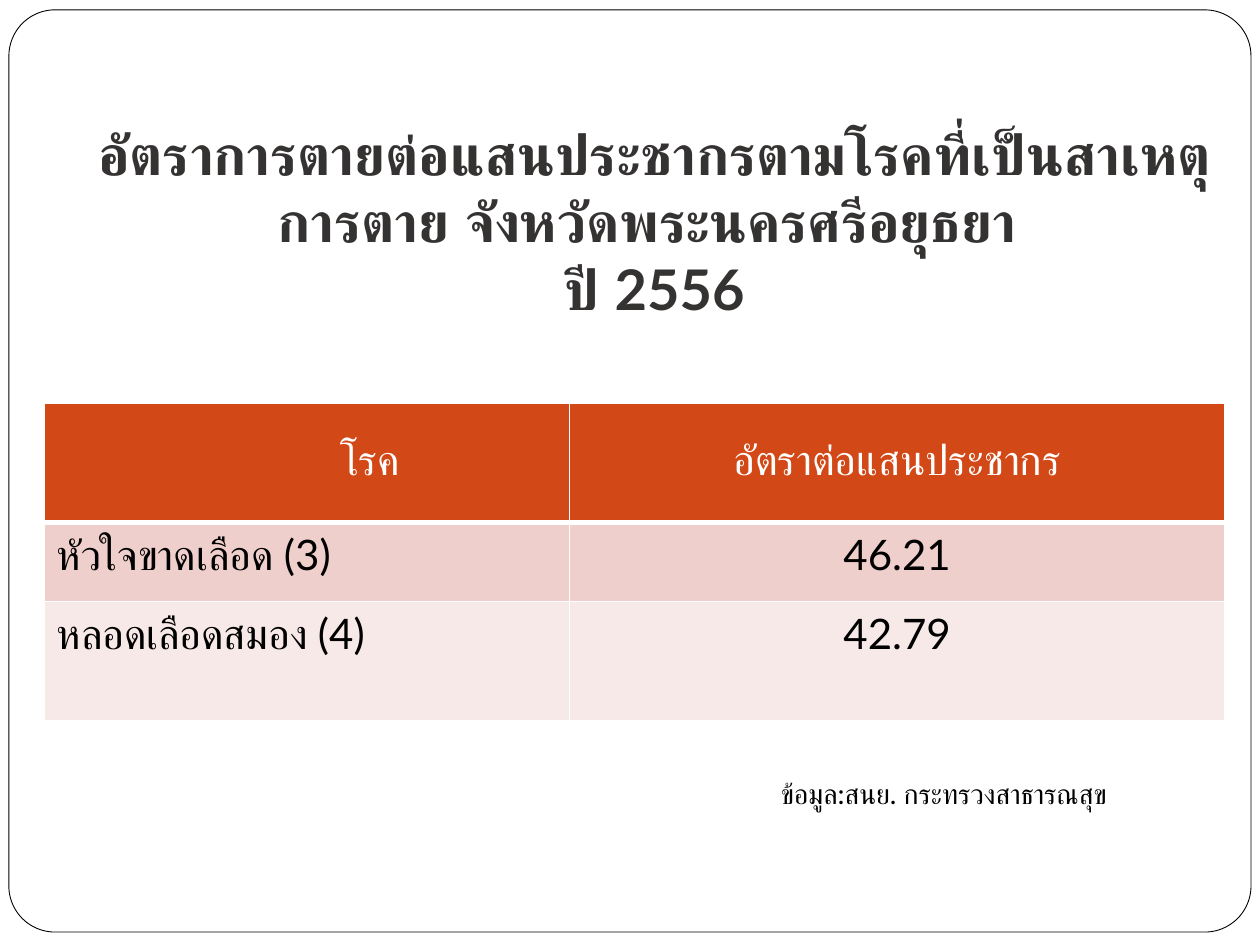
"""Build a slide with a table of death rates by disease."""
from lxml import etree
from pptx import Presentation
from pptx.dml.color import RGBColor
from pptx.enum.shapes import MSO_SHAPE
from pptx.enum.text import MSO_ANCHOR, MSO_AUTO_SIZE, PP_ALIGN
from pptx.oxml.ns import qn
from pptx.util import Cm, Pt

ROUNDED = MSO_SHAPE.ROUNDED_RECTANGLE
LEFT, CENTER = PP_ALIGN.LEFT, PP_ALIGN.CENTER
TOP, MIDDLE, BOTTOM = MSO_ANCHOR.TOP, MSO_ANCHOR.MIDDLE, MSO_ANCHOR.BOTTOM
NO_FIT = MSO_AUTO_SIZE.NONE

TITLE = "อัตราการตายต่อแสนประชากรตามโรคที่เป็นสาเหตุการตาย จังหวัดพระนครศรีอยุธยา \vปี 2556"
SOURCE = "ข้อมูล:สนย. กระทรวงสาธารณสุข"
RATES = [
    ("โรค", "อัตราต่อแสนประชากร"),
    ("หัวใจขาดเลือด (3)", "46.21"),
    ("หลอดเลือดสมอง (4)", "42.79"),
]

COLORS = {
    "white": "FFFFFF", "black": "000000", "title": "353232",
    "header": "D34817", "band_dark": "EFCFCC", "band_light": "F7E9E8",
}
ROW_FILLS = ["header", "band_dark", "band_light"]
ROW_HEIGHTS = [2.4, 1.6, 2.4]
COLUMN_WIDTHS = [10.59, 13.21]
FRAME_BOX = (0.18, 0.2, 25.04, 18.59)
TITLE_BOX = (1.5, 1.32, 23.39, 5.41)
SOURCE_BOX = (15.49, 15.52, 8.81, 0.94)
TABLE_BOX = (0.89, 8.13, sum(COLUMN_WIDTHS), sum(ROW_HEIGHTS))

FONTS = {
    "title": {"name": "Lato", "size": Pt(32), "bold": True},
    "cell": {"name": "Lato", "size": Pt(24), "bold": False},
    "source": {"name": "Lato", "size": Pt(16), "bold": False},
}
TITLE_FRAME = {
    "word_wrap": True, "auto_size": NO_FIT, "vertical_anchor": BOTTOM,
    "margin_left": Cm(0.25), "margin_right": Cm(0.25),
    "margin_top": Cm(0.13), "margin_bottom": Cm(0.25),
}


def apply(target, values):
    for key, value in values.items():
        setattr(target, key, value)


def lengths(box):
    return [Cm(value) for value in box]


def rgb(color):
    return RGBColor.from_string(COLORS[color])


def write(frame, text, style, color, align=LEFT):
    frame.text = text
    paragraph = frame.paragraphs[0]
    paragraph.alignment = align
    for run in paragraph.runs:
        apply(run.font, FONTS[style])
        run.font.color.rgb = rgb(color)


def add_borders(cell, bottom_width):
    properties = cell._tc.get_or_add_tcPr()
    for side, width in {"L": 1, "R": 1, "T": 1, "B": bottom_width}.items():
        border = etree.SubElement(properties, qn(f"a:ln{side}"), w=str(Pt(width)))
        fill = etree.SubElement(border, qn("a:solidFill"))
        etree.SubElement(fill, qn("a:srgbClr"), val=COLORS["white"])


def add_frame(slide):
    frame = slide.shapes.add_shape(ROUNDED, *lengths(FRAME_BOX))
    frame.adjustments[0] = 0.05
    frame.shadow.inherit = False
    frame.fill.solid()
    frame.fill.fore_color.rgb = rgb("white")
    frame.line.color.rgb = rgb("black")
    frame.line.width = Pt(0.5)
    slide.shapes._spTree.insert(2, frame._element)


def add_title(slide):
    title = slide.shapes.title
    apply(title, dict(zip(("left", "top", "width", "height"), lengths(TITLE_BOX))))
    apply(title.text_frame, TITLE_FRAME)
    write(title.text_frame, TITLE, "title", "title", CENTER)


def add_rates(slide):
    table = slide.shapes.add_table(len(RATES), len(COLUMN_WIDTHS), *lengths(TABLE_BOX)).table
    for column, width in zip(table.columns, COLUMN_WIDTHS):
        column.width = Cm(width)
    for row_index, (entries, height, fill) in enumerate(zip(RATES, ROW_HEIGHTS, ROW_FILLS)):
        table.rows[row_index].height = Cm(height)
        is_header = row_index == 0
        for column_index, entry in enumerate(entries):
            cell = table.cell(row_index, column_index)
            add_borders(cell, 3 if is_header else 1)
            cell.fill.solid()
            cell.fill.fore_color.rgb = rgb(fill)
            cell.vertical_anchor = MIDDLE if is_header else TOP
            align = CENTER if is_header or column_index else LEFT
            write(cell.text_frame, entry, "cell", "white" if is_header else "black", align)
    table.cell(0, 0).margin_left = Cm(2.8)


def add_source(slide):
    source = slide.shapes.add_textbox(*lengths(SOURCE_BOX))
    source.text_frame.word_wrap = True
    write(source.text_frame, SOURCE, "source", "black")


def main():
    deck = Presentation()
    apply(deck, {"slide_width": Cm(25.4), "slide_height": Cm(19.05)})
    slide = deck.slides.add_slide(deck.slide_layouts[5])
    add_frame(slide)
    add_title(slide)
    add_source(slide)
    add_rates(slide)
    deck.save("out.pptx")


if __name__ == "__main__":
    main()
